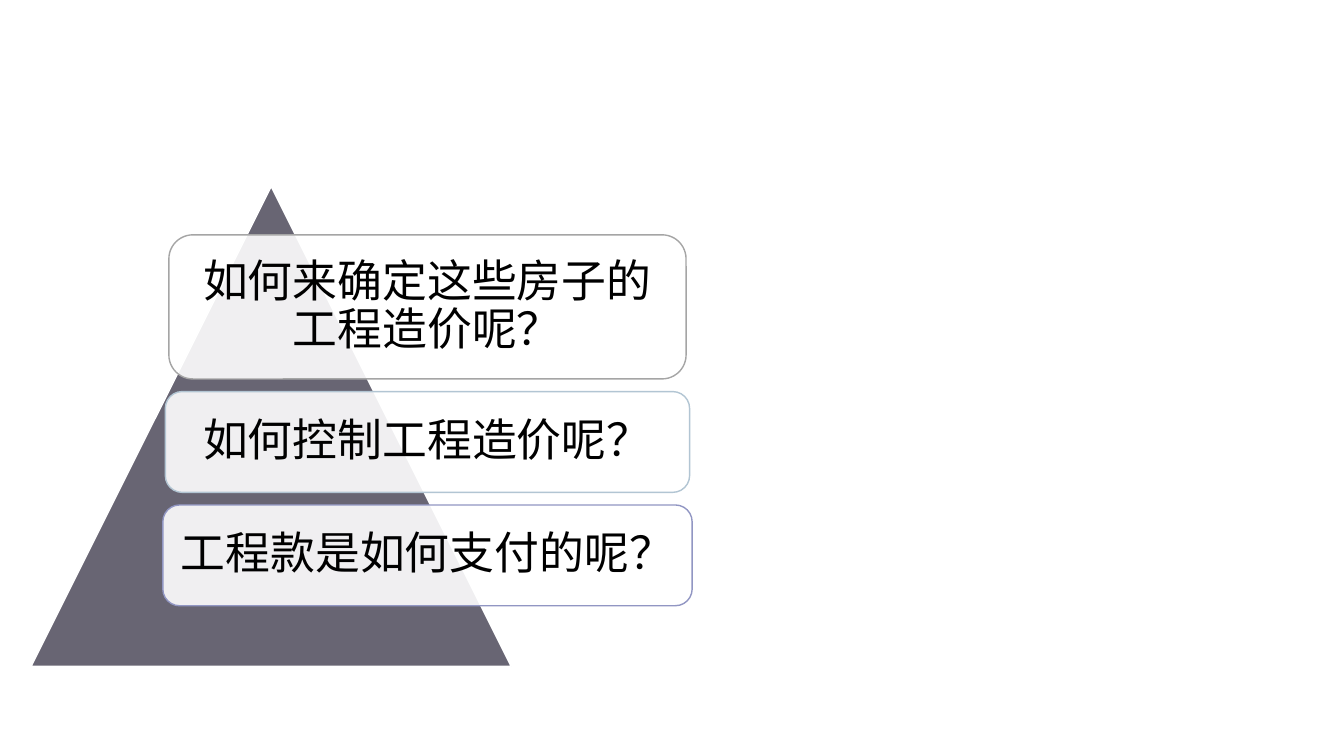
from pptx import Presentation
from pptx.dml.color import RGBColor
from pptx.enum.shapes import MSO_SHAPE
from pptx.enum.text import MSO_ANCHOR, PP_ALIGN
from pptx.oxml.ns import qn
from pptx.util import Inches, Pt
from lxml.etree import SubElement

FONT = "Noto Sans CJK SC"
WHITE = RGBColor(0xFF, 0xFF, 0xFF)
BLACK = RGBColor(0x00, 0x00, 0x00)
SLATE = RGBColor(0x68, 0x65, 0x73)
GREY = RGBColor(0xA5, 0xA5, 0xA5)
BLUE = RGBColor(0xB2, 0xC5, 0xD3)
VIOLET = RGBColor(0x91, 0x96, 0xC3)

deck = Presentation()
deck.slide_width, deck.slide_height = Inches(13.33), Inches(7.5)
slide = deck.slides.add_slide(deck.slide_layouts[6])


def add_form(kind, left, top, width, height, fill, line):
    form = slide.shapes.add_shape(
        kind, Inches(left), Inches(top), Inches(width), Inches(height))
    form.shadow.inherit = False
    form.fill.solid()
    form.fill.fore_color.rgb = fill
    form.line.color.rgb = line
    form.line.width = Pt(1)
    return form


# Pyramid
add_form(MSO_SHAPE.ISOSCELES_TRIANGLE, 0.31, 1.85, 4.76, 4.76, SLATE, WHITE)

# Question cards, stacked on one centre line
MID, GAP = 4.24, 0.125
cards = [
    ("如何来确定这些房子的工程造价呢？", 5.13, 1.43, GREY),
    ("如何控制工程造价呢？", 5.2, 1, BLUE),
    ("工程款是如何支付的呢？", 5.25, 1, VIOLET),
]
top = 2.33
for text, width, height, line in cards:
    card = add_form(MSO_SHAPE.ROUNDED_RECTANGLE, MID - width / 2, top,
                    width, height, WHITE, line)
    top += height + GAP

    # See-through fill
    tint = card.fill._xPr.find(qn("a:solidFill"))[0]
    SubElement(tint, qn("a:alpha")).set("val", "90000")

    # Margins allow for the room taken by the round corners
    frame = card.text_frame
    frame.word_wrap = True
    frame.vertical_anchor = MSO_ANCHOR.MIDDLE
    inset = Inches(0.13 - 0.05 * height)
    frame.margin_left = frame.margin_right = inset
    frame.margin_top = frame.margin_bottom = inset

    para = frame.paragraphs[0]
    para.text = text
    para.alignment = PP_ALIGN.CENTER
    para.line_spacing = 0.9
    para.space_after = Pt(11)
    para.font.size = Pt(32)
    para.font.name = FONT
    para.font.color.rgb = BLACK
    SubElement(para.font._element, qn("a:ea")).set("typeface", FONT)

deck.save("out.pptx")
